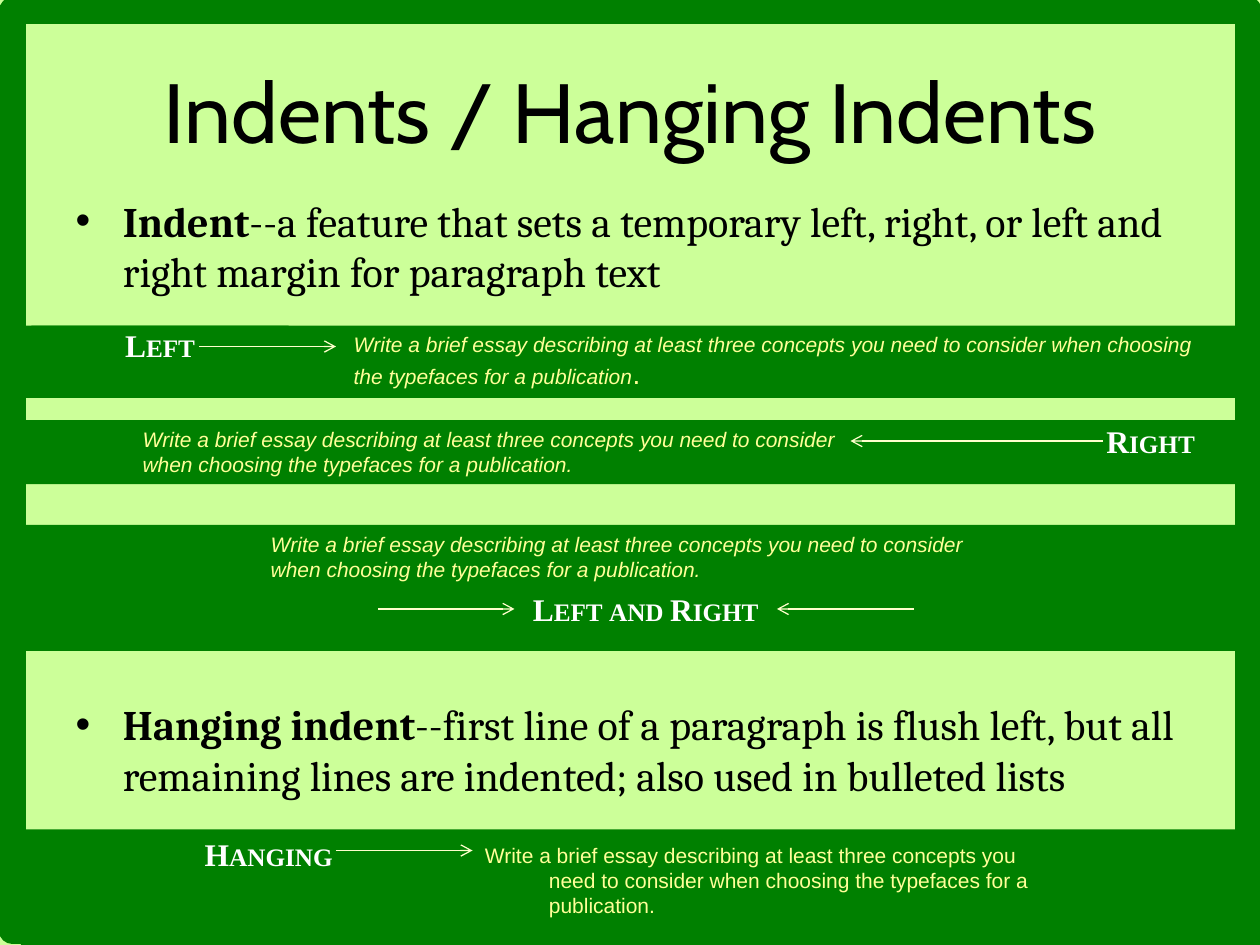
from collections import namedtuple

from lxml.etree import SubElement
from pptx import Presentation
from pptx.dml.color import RGBColor
from pptx.enum.shapes import MSO_CONNECTOR as Connector, MSO_SHAPE as Shape
from pptx.enum.text import MSO_ANCHOR as Anchor, MSO_AUTO_SIZE as AutoSize, PP_ALIGN as Align
from pptx.oxml.ns import qn
from pptx.util import Inches, Pt

COLUMNS, ROWS = 120, 90
WIDTH, HEIGHT = Inches(10), Inches(7.5)
GREEN, PALE, BLACK, WHITE = "008000", "CCFF99", "000000", "FFFFFF"
SAMPLE_COLOR, ARROW_COLOR = "FFFF99", "FFFFCC"

OPENING = "Write a brief essay describing at least three concepts you need to consider"
ENDING = "when choosing the typefaces for a publication."

Box = namedtuple("Box", "column row columns rows")


def across(columns):
    return round(WIDTH * columns / COLUMNS)


def down(rows):
    return round(HEIGHT * rows / ROWS)


def place(box):
    return across(box.column), down(box.row), across(box.columns), down(box.rows)


def within(region, part):
    """Turn a box measured from the region's corner into a slide box."""
    return Box(region.column + part.column, region.row + part.row, part.columns, part.rows)


def color(hex_string):
    return RGBColor.from_string(hex_string)


def set_indent(paragraph, left, first=0):
    properties = paragraph._p.get_or_add_pPr()
    properties.set("marL", str(across(left)))
    properties.set("indent", str(across(first)))


def add_run(paragraph, text, size, font, hex_string, bold=False, italic=False):
    run = paragraph.add_run()
    run.text = text
    run.font.size = Pt(size)
    run.font.name = font
    run.font.bold = bold
    run.font.italic = italic
    run.font.color.rgb = color(hex_string)
    return run


def add_rectangle(slide, box):
    shape = slide.shapes.add_shape(Shape.RECTANGLE, *place(box))
    shape.shadow.inherit = False
    shape.fill.solid()
    shape.fill.fore_color.rgb = color(GREEN)
    shape.line.fill.background()
    return shape


def add_frame(slide, box):
    frame = add_rectangle(slide, box)
    frame.fill.background()
    frame.line.color.rgb = color(GREEN)
    frame.line.width = Pt(15)


def fill_title(slide, box, text):
    title = slide.shapes.title
    title.left, title.top, title.width, title.height = place(box)
    title.text_frame.vertical_anchor = Anchor.MIDDLE
    paragraph = title.text_frame.paragraphs[0]
    paragraph.alignment = Align.CENTER
    add_run(paragraph, text, 48, "Cabin", BLACK)


def fill_definitions(slide, box, definitions, gap):
    """List terms with meanings, leaving a gap for the examples between them."""
    body = slide.placeholders[1]
    body.left, body.top, body.width, body.height = place(box)
    frame = body.text_frame
    frame.auto_size = AutoSize.NONE
    for index, (term, meaning) in enumerate(definitions):
        paragraph = frame.add_paragraph() if index else frame.paragraphs[0]
        if index:
            paragraph.space_before = gap
        set_indent(paragraph, 4.5, -4.5)
        SubElement(paragraph._p.get_or_add_pPr(), qn("a:buChar")).set("char", "•")
        add_run(paragraph, term, 24, "Cambria", BLACK, bold=True)
        add_run(paragraph, meaning, 24, "Cambria", BLACK)


def add_sample(shape, lines, left, first=0, italic=True):
    frame = shape.text_frame
    frame.word_wrap = True
    frame.vertical_anchor = Anchor.TOP
    paragraph = frame.paragraphs[0]
    paragraph.alignment = Align.LEFT
    set_indent(paragraph, left, first)
    for index, line in enumerate(lines):
        if index:
            paragraph.add_line_break()
        add_run(paragraph, line, 12, "Arial", SAMPLE_COLOR, italic=italic)
    return paragraph


def add_label(slide, box, text, alignment=Align.CENTER):
    label = add_rectangle(slide, box)
    label.text_frame.word_wrap = True
    label.text_frame.vertical_anchor = Anchor.MIDDLE
    paragraph = label.text_frame.paragraphs[0]
    paragraph.alignment = alignment
    run = add_run(paragraph, text, 18, "Times New Roman", WHITE, bold=True)
    run._r.get_or_add_rPr().set("cap", "small")


def add_arrow(slide, region, start, end, row):
    arrow = slide.shapes.add_connector(
        Connector.STRAIGHT,
        across(region.column + start), down(region.row + row),
        across(region.column + end), down(region.row + row))
    arrow.line.color.rgb = color(ARROW_COLOR)
    arrow.line.width = Pt(0.75)
    SubElement(arrow.line._get_or_add_ln(), qn("a:tailEnd")).set("type", "arrow")
    SubElement(arrow._element.spPr, qn("a:effectLst"))


def add_left_example(slide, region):
    band = add_rectangle(slide, region)
    paragraph = add_sample(
        band, [f"{OPENING} when choosing ", "the typefaces for a publication"], 32.3)
    add_run(paragraph, ".", 16, "Arial", SAMPLE_COLOR)
    add_label(slide, within(region, Box(2.8, 0, 24.5, 3.7)), "Left")
    add_arrow(slide, region, 18.8, 31.8, 2)


def add_right_example(slide, region):
    add_sample(add_rectangle(slide, region), [f"{OPENING} ", ENDING], 10.4)
    add_label(slide, within(region, Box(90, 0, 23, 4)), "Right", Align.RIGHT)
    add_arrow(slide, region, 103, 79, 2)


def add_both_example(slide, region):
    add_rectangle(slide, region)
    sample = slide.shapes.add_textbox(*place(within(region, Box(21, 0, 72, 6.1))))
    add_sample(sample, [f"{OPENING} {ENDING}"], 1.6)
    add_label(slide, within(region, Box(40, 6, 39, 4)), "Left and Right")
    add_arrow(slide, region, 34, 47, 8)
    add_arrow(slide, region, 85, 72, 8)


def add_hanging_example(slide, region):
    add_rectangle(slide, region)
    sample = slide.shapes.add_textbox(*place(within(region, Box(43, 0.6, 57, 8.5))))
    add_sample(sample, [f"{OPENING} {ENDING}"], 6.1, -6.1, italic=False)
    add_label(slide, within(region, Box(16.1, 0.2, 15, 4.3)), "Hanging")
    add_arrow(slide, region, 30, 43, 2)


def main():
    presentation = Presentation()
    presentation.slide_width, presentation.slide_height = WIDTH, HEIGHT
    slide = presentation.slides.add_slide(presentation.slide_layouts[1])
    slide.background.fill.solid()
    slide.background.fill.fore_color.rgb = color(PALE)

    add_frame(slide, Box(1.2, 1, 117.7, 87.7))
    fill_title(slide, Box(6, 3, 108, 15), "Indents / Hanging Indents")
    fill_definitions(slide, Box(6, 18, 108, 62.4), [
        ("Indent", "--a feature that sets a temporary left, right, "
                   "or left and right margin for paragraph text"),
        ("Hanging indent", "--first line of a paragraph is flush left, but all "
                           "remaining lines are indented; also used in bulleted lists"),
    ], gap=Pt(230))
    add_left_example(slide, Box(0.2, 31, 118, 6.9))
    add_right_example(slide, Box(2, 40, 116, 6.1))
    add_both_example(slide, Box(2, 50, 118, 12))
    add_hanging_example(slide, Box(2, 79, 118, 11))
    presentation.save("out.pptx")


if __name__ == "__main__":
    main()
